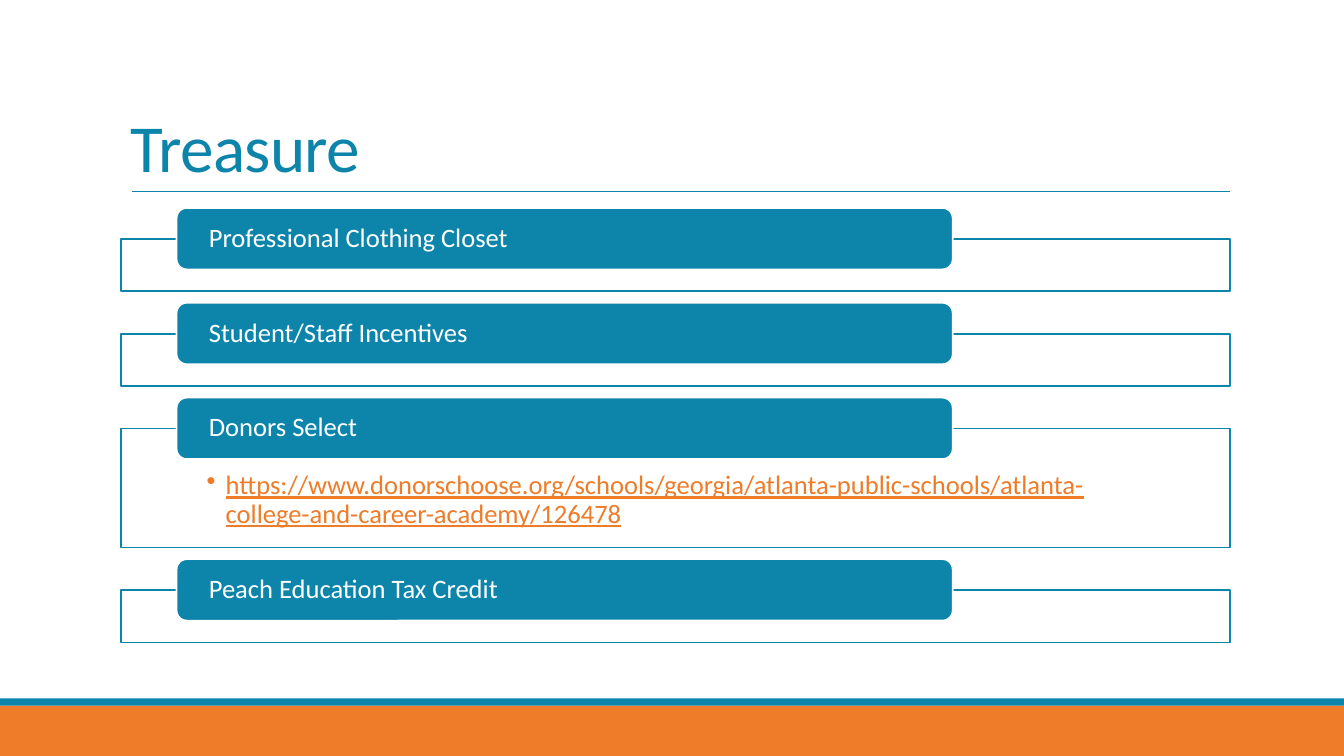
from dataclasses import dataclass

from lxml.etree import SubElement
from pptx import Presentation
from pptx.dml.color import RGBColor
from pptx.enum.shapes import MSO_CONNECTOR, MSO_SHAPE
from pptx.enum.text import MSO_ANCHOR, PP_ALIGN
from pptx.oxml.ns import qn
from pptx.util import Cm, Pt


@dataclass(frozen=True)
class Theme:
    teal: RGBColor = RGBColor(0x0D, 0x85, 0xAB)
    orange: RGBColor = RGBColor(0xEE, 0x7C, 0x29)
    white: RGBColor = RGBColor(0xFF, 0xFF, 0xFF)
    font: str = "Calibri"
    title_size: Pt = Pt(48)
    body_size: Pt = Pt(19)
    outline: Pt = Pt(1.25)


theme = Theme()
deck = Presentation()
deck.slide_width, deck.slide_height = Cm(33.87), Cm(19.05)
page = deck.slides.add_slide(deck.slide_layouts[6])


def add_block(kind, left, top, width, height, fill, line=None):
    block = page.shapes.add_shape(kind, Cm(left), Cm(top), Cm(width), Cm(height))
    block.shadow.inherit = False
    block.fill.solid()
    block.fill.fore_color.rgb = fill
    if line is None:
        block.line.fill.background()
    else:
        block.line.color.rgb = line
        block.line.width = theme.outline
    return block


def write_text(box, text, size, color, anchor, margins, spacing):
    frame = box.text_frame
    frame.word_wrap = True
    frame.vertical_anchor = anchor
    frame.margin_left, frame.margin_top, frame.margin_right, frame.margin_bottom = map(Cm, margins)
    para = frame.paragraphs[0]
    para.text = text
    para.alignment = PP_ALIGN.LEFT
    para.line_spacing = spacing
    para.font.name = theme.font
    para.font.size = size
    para.font.color.rgb = color
    return para


add_block(MSO_SHAPE.RECTANGLE, 0, 17.78, 33.87, 1.27, theme.orange)
add_block(MSO_SHAPE.RECTANGLE, 0, 17.6, 33.87, 0.18, theme.teal)

rule = page.shapes.add_connector(MSO_CONNECTOR.STRAIGHT, Cm(3.32), Cm(4.82), Cm(31), Cm(4.82))
rule.line.color.rgb = theme.teal
rule.line.width = Pt(0.5)
SubElement(rule._element.spPr, qn("a:effectLst"))

title = page.shapes.add_textbox(Cm(3.05), Cm(0.79), Cm(27.94), Cm(4.03))
title_para = write_text(title, "Treasure", theme.title_size, theme.teal,
                        MSO_ANCHOR.BOTTOM, (0.25, 0.13, 0.25, 0.13), 0.85)
title_para.runs[0].font._element.set("spc", "-50")

topics = [
    ("Professional Clothing Closet", None),
    ("Student/Staff Incentives", None),
    ("Donors Select", "https://www.donorschoose.org/schools/georgia/"
     "atlanta-public-schools/atlanta-college-and-career-academy/126478"),
    ("Peach Education Tax Credit", None),
]
tab_overlap = 0.78
topic_gap = 0.29
tab_top = 5.24
for heading, link in topics:
    frame_height = 3 if link else 1.32
    frame_top = tab_top + tab_overlap
    panel = add_block(MSO_SHAPE.RECTANGLE, 3.05, frame_top, 27.94, frame_height,
                      theme.white, theme.teal)
    panel_color = panel._element.spPr.find(qn("a:solidFill"))[0]
    SubElement(panel_color, qn("a:alpha"), val="90000")
    if link:
        link_properties = panel.text_frame.paragraphs[0]._p.get_or_add_pPr()
        link_properties.set("marL", str(Cm(0.48)))
        link_properties.set("indent", str(Cm(-0.48)))
        SubElement(link_properties, qn("a:buChar"), char="•")
        link_para = write_text(panel, link, theme.body_size, theme.orange,
                               MSO_ANCHOR.TOP, (2.16, 1.09, 2.16, 0.38), 0.9)
        link_para.font.underline = True
    tab = add_block(MSO_SHAPE.ROUNDED_RECTANGLE, 4.45, tab_top, 19.56, 1.55,
                    theme.teal, theme.white)
    write_text(tab, heading, theme.body_size, theme.white,
               MSO_ANCHOR.MIDDLE, (0.74, 0, 0.74, 0), 0.9)
    tab_top = frame_top + frame_height + topic_gap

deck.save("out.pptx")
